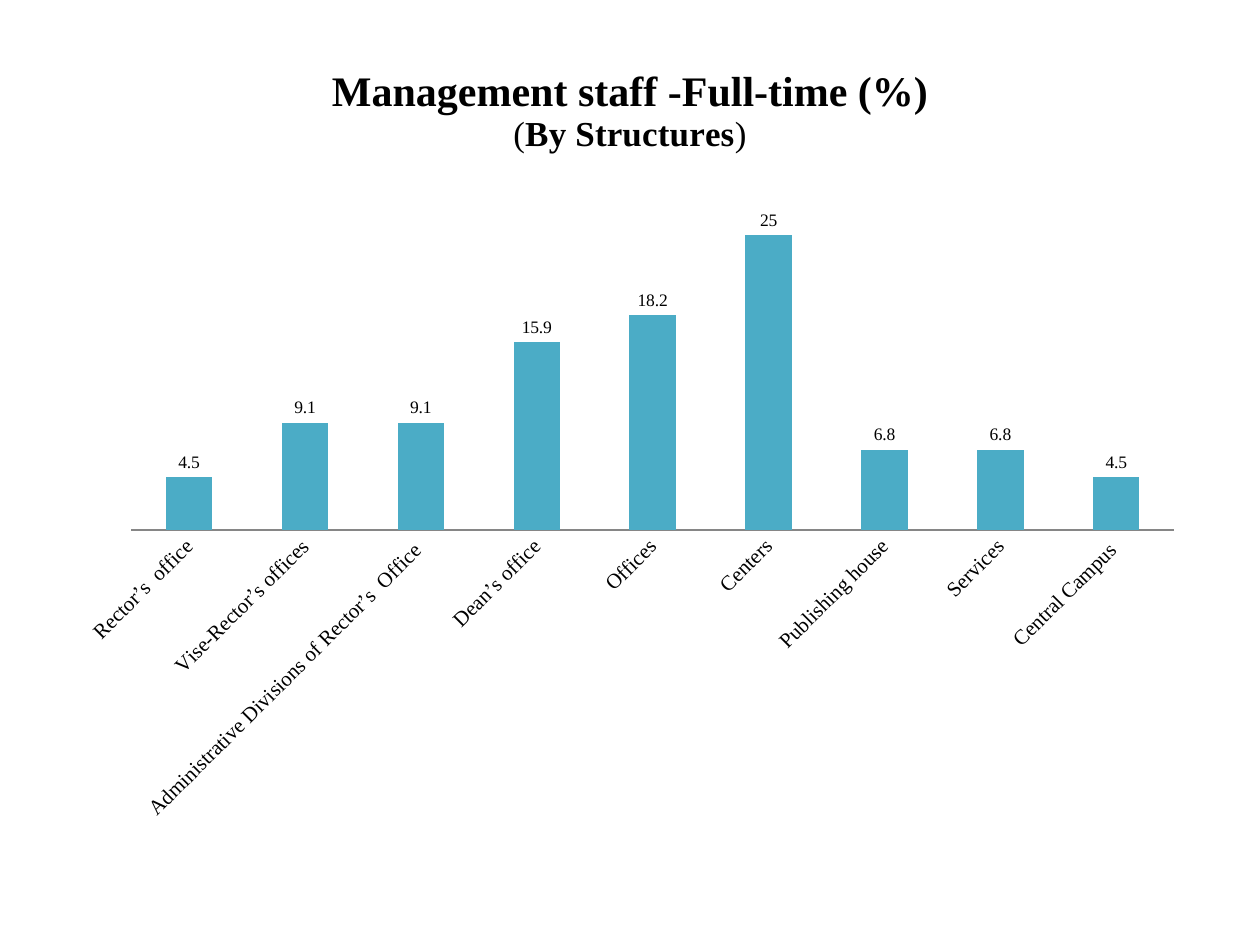
from lxml.etree import SubElement
from pptx import Presentation
from pptx.chart.data import CategoryChartData
from pptx.dml.color import RGBColor
from pptx.enum.chart import XL_CHART_TYPE, XL_LABEL_POSITION, XL_TICK_MARK
from pptx.oxml.ns import qn
from pptx.util import Inches, Pt

BLACK = RGBColor(0x00, 0x00, 0x00)
GRAY = RGBColor(0x86, 0x86, 0x86)
TEAL = RGBColor(0x4B, 0xAC, 0xC6)
SERIF = "Times New Roman"

STAFF = [
    ("Rector’s  office", 4.5),
    ("Vise-Rector’s offices", 9.1),
    (" Administrative Divisions of Rector’s  Office ", 9.1),
    ("Dean’s office", 15.9),
    ("Offices", 18.2),
    ("Centers", 25),
    ("Publishing house", 6.8),
    ("Services", 6.8),
    ("Central Campus ", 4.5),
]


def set_font(font, size, name=SERIF, bold=False):
    """Format a font in black."""
    font.name = name
    font.size = Pt(size)
    font.bold = bold
    font.color.rgb = BLACK


def add_text(para, text, **form):
    """Add a formatted run to a paragraph."""
    run = para.add_run()
    run.text = text
    set_font(run.font, **form)


def add_chart(slide):
    """Add the column chart of staff shares."""
    data = CategoryChartData()
    data.categories = [name for name, share in STAFF]
    data.add_series("Series 1", [share for name, share in STAFF])
    frame = slide.shapes.add_chart(
        XL_CHART_TYPE.COLUMN_CLUSTERED,
        Inches(0.5), Inches(0.31), Inches(9), Inches(6.39), data)
    chart = frame.chart
    chart.has_legend = False
    set_font(chart.font, 10, name="Calibri")
    return chart


def add_title(chart):
    """Write the two-line chart title."""
    chart.has_title = True
    chart.chart_title.include_in_layout = False
    frame = chart.chart_title.text_frame
    add_text(frame.paragraphs[0], "Management staff -Full-time (%)", size=24, bold=True)
    para = frame.add_paragraph()
    for text, bold in (("(", False), ("By Structures", True), (")", False)):
        add_text(para, text, size=20, bold=bold)


def style_bars(chart):
    """Colour the columns and show their values."""
    plot = chart.plots[0]
    plot.gap_width = 150
    plot.overlap = -25
    plot.vary_by_categories = False
    fill = plot.series[0].format.fill
    fill.solid()
    fill.fore_color.rgb = TEAL
    plot.has_data_labels = True
    labels = plot.data_labels
    labels.show_value = True
    labels.position = XL_LABEL_POSITION.OUTSIDE_END
    set_font(labels.font, 10)


def style_axes(chart):
    """Hide the value axis and slant the category names."""
    value = chart.value_axis
    value.minimum_scale = 0
    value.maximum_scale = 30
    value.has_major_gridlines = False
    value.visible = False
    axis = chart.category_axis
    axis.major_tick_mark = XL_TICK_MARK.NONE
    axis.format.line.color.rgb = GRAY
    axis.format.line.width = Pt(0.75)
    set_font(axis.tick_labels.font, 12)
    body = axis._element.find(qn("c:txPr")).find(qn("a:bodyPr"))
    body.set("rot", "-2700000")
    body.set("vert", "horz")


def place_plot(chart, **place):
    """Fix the inner plot area as fractions of the chart."""
    area = chart._chartSpace.chart.plotArea
    for old in area.findall(qn("c:layout")):
        area.remove(old)
    layout = SubElement(area, qn("c:layout"))
    area.insert(0, layout)
    manual = SubElement(layout, qn("c:manualLayout"))
    marks = {"layoutTarget": "inner", "xMode": "edge", "yMode": "edge", **place}
    for tag, val in marks.items():
        SubElement(manual, qn(f"c:{tag}")).set("val", str(val))


def main():
    """Build and save the slide."""
    deck = Presentation()
    deck.slide_width = Inches(10)
    deck.slide_height = Inches(7.5)
    slide = deck.slides.add_slide(deck.slide_layouts[6])
    chart = add_chart(slide)
    add_title(chart)
    style_bars(chart)
    style_axes(chart)
    place_plot(chart, x=0.06, y=0.17, w=0.92, h=0.44)
    deck.save("out.pptx")


if __name__ == "__main__":
    main()
